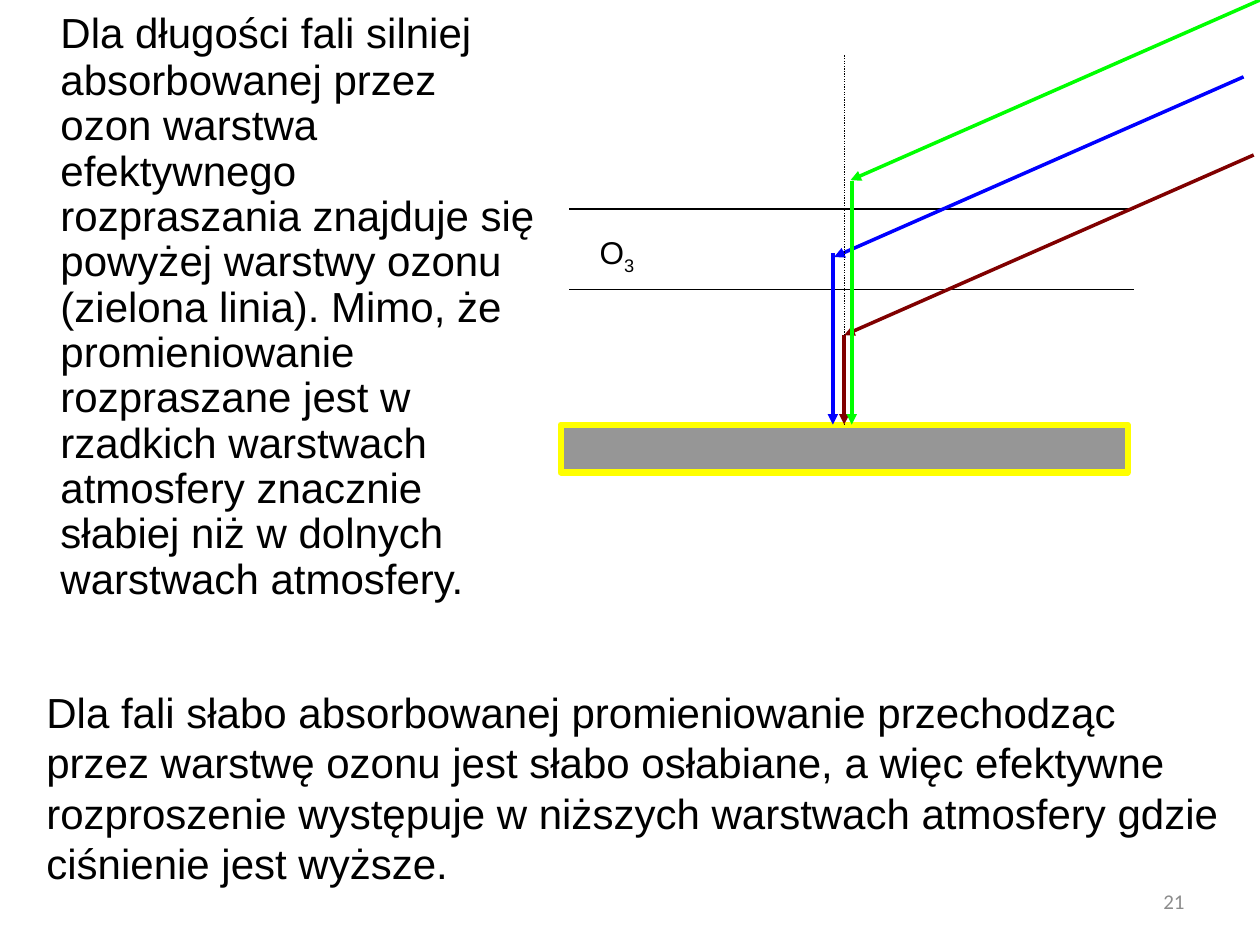
import dataclasses

import lxml.etree
import pptx
import pptx.dml.color
import pptx.enum.dml
import pptx.enum.shapes
import pptx.enum.text
import pptx.oxml.ns
import pptx.util

COLUMNS, ROWS = 100, 75  # page grid
CELL = pptx.util.Inches(10) // COLUMNS


@dataclasses.dataclass(frozen=True)
class Theme:
    font: str = "Arial"
    number_font: str = "Calibri"
    text: str = "000000"
    number: str = "8C8C8C"
    ground: str = "969696"
    ground_edge: str = "FFFF00"
    blue: str = "0000FF"
    brown: str = "800000"
    green: str = "00FF00"
    body_size: float = 24
    tab_size: float = 28
    label_size: float = 18
    number_size: float = 12
    thin: float = 0.75
    ray: float = 2
    edge: float = 3.5


@dataclasses.dataclass(frozen=True)
class Box:
    """An area in grid columns and rows."""
    left: float
    top: float
    width: float
    height: float

    def inner(self, left, top, width, height):
        return Box(self.left + left, self.top + top, width, height)

    def point(self, column, row):
        return round((self.left + column) * CELL), round((self.top + row) * CELL)

    def extent(self):
        return (*self.point(0, 0), round(self.width * CELL), round(self.height * CELL))


THEME = Theme()


def rgb(value):
    return pptx.dml.color.RGBColor.from_string(value)


def style(span, size, color=THEME.text, font=THEME.font):
    span.font.size = pptx.util.Pt(size)
    span.font.name = font
    span.font.color.rgb = rgb(color)


def add_text(page, box, text, size, color=THEME.text, font=THEME.font):
    frame = page.shapes.add_textbox(*box.extent()).text_frame
    frame.word_wrap = True
    frame.text = text
    para = frame.paragraphs[0]
    style(para.runs[0], size, color, font)
    return frame, para


def add_line(page, start, end, color, width, arrow=False):
    line = page.shapes.add_connector(
        pptx.enum.shapes.MSO_CONNECTOR.STRAIGHT, *start, *end)
    line.line.color.rgb = rgb(color)
    line.line.width = pptx.util.Pt(width)
    if arrow:
        outline = line.line._get_or_add_ln()
        lxml.etree.SubElement(outline, pptx.oxml.ns.qn("a:tailEnd"), type="triangle")
    lxml.etree.SubElement(line._element.spPr, pptx.oxml.ns.qn("a:effectLst"))
    return line


def place_body(page, box):
    """Explanation beside the diagram, with a hanging first line."""
    body = page.placeholders[1]
    body.left, body.top, body.width, body.height = box.extent()
    frame = body.text_frame
    frame.auto_size = pptx.enum.text.MSO_AUTO_SIZE.NONE
    frame.vertical_anchor = pptx.enum.text.MSO_ANCHOR.TOP
    para = frame.paragraphs[0]
    para.line_spacing = 0.9
    para.space_before = pptx.util.Pt(5)
    tab, words = para.add_run(), para.add_run()
    tab.text = "\t"
    words.text = (
        "Dla długości fali silniej absorbowanej przez ozon warstwa efektywnego "
        "rozpraszania znajduje się powyżej warstwy ozonu (zielona linia). Mimo, że "
        "promieniowanie rozpraszane jest w rzadkich warstwach atmosfery znacznie "
        "słabiej niż w dolnych warstwach atmosfery.")
    style(tab, THEME.tab_size, font=THEME.number_font)
    style(words, THEME.body_size)
    # Hanging indent without a bullet
    hang = pptx.util.Inches(0.38)
    properties = para._p.get_or_add_pPr()
    properties.set("marL", str(hang))
    properties.set("indent", str(-hang))
    lxml.etree.SubElement(properties, pptx.oxml.ns.qn("a:buNone"))


def place_diagram(page, box):
    """Sun rays scattered down to the ground around the ozone layer."""
    ground_top, ground_width = 33.7, 45
    axis = ground_width / 2

    # Ground
    ground = page.shapes.add_shape(
        pptx.enum.shapes.MSO_SHAPE.RECTANGLE,
        *box.inner(0, ground_top, ground_width, 3.8).extent())
    ground.shadow.inherit = False
    ground.fill.solid()
    ground.fill.fore_color.rgb = rgb(THEME.ground)
    ground.line.color.rgb = rgb(THEME.ground_edge)
    ground.line.width = pptx.util.Pt(THEME.edge)

    # Ozone layer limits
    for row in (16.6, 23):
        add_line(page, box.point(0.7, row), box.point(45.5, row),
                 THEME.text, THEME.thin)

    # Slanted rays: colour, scattering point, column and top of the way down
    rays = [
        (THEME.blue, (21.7, 20.4), axis - 0.9, 20.1),
        (THEME.brown, (axis, 26.6), axis, 26.6),
        (THEME.green, (23, 14.3), axis + 0.6, 14.4),
    ]
    for color, (column, row), _, _ in rays:
        add_line(page, box.point(column + 32.5, row - 14.3),
                 box.point(column, row), color, THEME.ray, arrow=True)

    # Vertical axis
    vertical = add_line(page, box.point(axis, 4.4), box.point(axis, ground_top),
                        THEME.text, THEME.thin)
    vertical.line.dash_style = pptx.enum.dml.MSO_LINE.ROUND_DOT
    vertical.end_connect(ground, 0)

    # Scattered rays
    for color, _, column, row in rays:
        line = add_line(page, box.point(column, row), box.point(column, ground_top),
                        color, THEME.ray, arrow=True)
        if column == axis:
            line.end_connect(ground, 0)

    # Ozone label
    _, para = add_text(page, box.inner(2.1, 18, 5.8, 4), "O", THEME.label_size)
    para.space_before = pptx.util.Pt(9)
    index = para.add_run()
    index.text = "3"
    style(index, THEME.label_size)
    index.font._element.set("baseline", "-25000")


def place_conclusion(page, box):
    _, para = add_text(
        page, box,
        "Dla fali słabo absorbowanej promieniowanie przechodząc przez warstwę ozonu "
        "jest słabo osłabiane, a więc efektywne rozproszenie występuje w niższych "
        "warstwach atmosfery gdzie ciśnienie jest wyższe.", THEME.body_size)
    para.space_before = pptx.util.Pt(5)


def place_number(page, box):
    frame, para = add_text(page, box, "21", THEME.number_size,
                           THEME.number, THEME.number_font)
    frame.vertical_anchor = pptx.enum.text.MSO_ANCHOR.MIDDLE
    para.alignment = pptx.enum.text.PP_ALIGN.RIGHT


def main():
    deck = pptx.Presentation()
    deck.slide_width, deck.slide_height = COLUMNS * CELL, ROWS * CELL
    page = deck.slides.add_slide(deck.slide_layouts[1])
    title = page.shapes.title._element
    title.getparent().remove(title)

    place_number(page, Box(71.7, 69.5, 23.3, 4))
    place_body(page, Box(0, 0, 43.7, 49.5))
    place_diagram(page, Box(44.5, 0, 55.5, 37.5))
    place_conclusion(page, Box(2.7, 54, 95.3, 21))
    deck.save("out.pptx")


if __name__ == "__main__":
    main()
